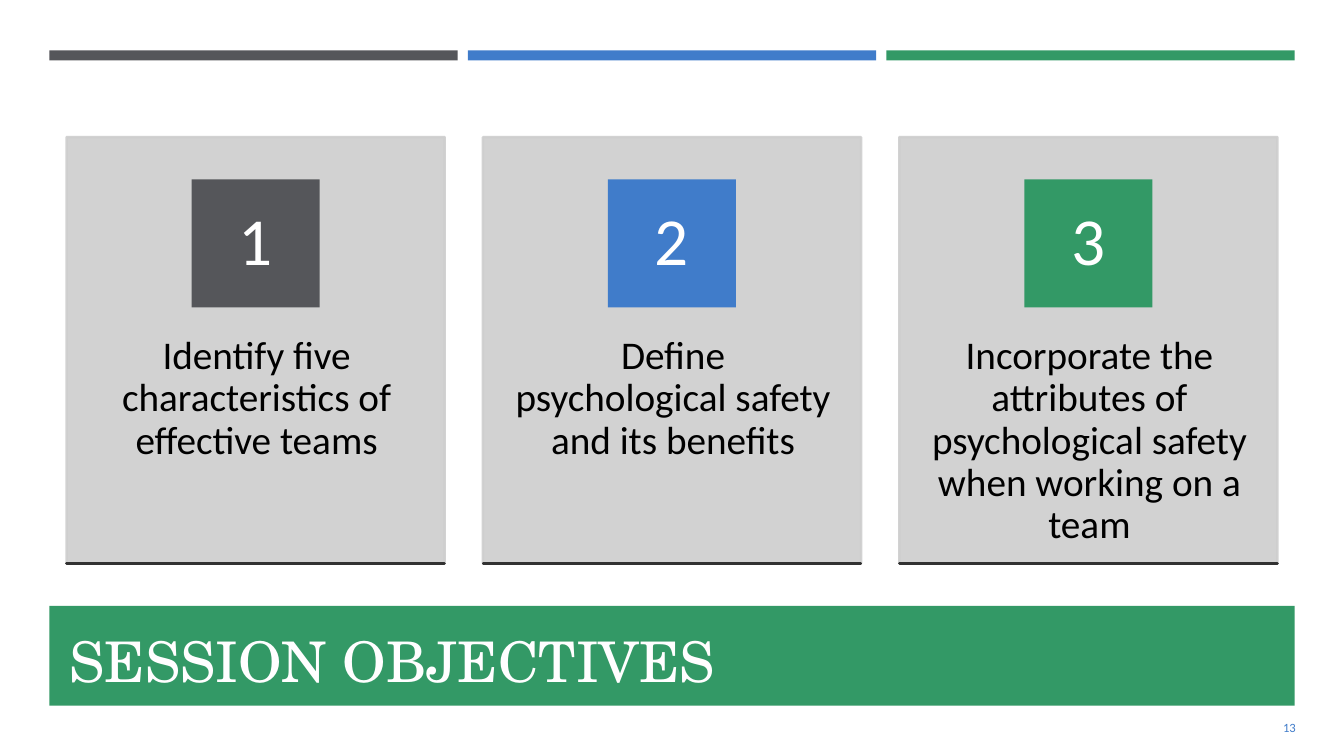
import pptx
import pptx.dml.color
import pptx.enum.shapes
import pptx.enum.text
import pptx.oxml
import pptx.oxml.ns
import pptx.util
from dataclasses import dataclass

Inches = pptx.util.Inches
Align = pptx.enum.text.PP_ALIGN
Anchor = pptx.enum.text.MSO_ANCHOR


@dataclass(frozen=True)
class Theme:
    gray: str = "55565A"
    blue: str = "407CCA"
    green: str = "339966"
    card: str = "CECECE"
    rule: str = "323232"
    title_text: str = "FFFEFF"
    white: str = "FFFFFF"
    black: str = "000000"
    heading_font: str = "TeX Gyre Schola"
    body_font: str = "Calibri"
    title_size: int = 40
    number_size: int = 48
    body_size: int = 28
    footer_size: int = 9
    line_width: float = 1.75


theme = Theme()
deck = pptx.Presentation()
deck.slide_width, deck.slide_height = Inches(13.33), Inches(7.5)
page = deck.slides.add_slide(deck.slide_layouts[6])


def add_block(left, top, width, height, color, outlined=False, opacity=100):
    block = page.shapes.add_shape(
        pptx.enum.shapes.MSO_SHAPE.RECTANGLE,
        Inches(left), Inches(top), Inches(width), Inches(height))
    block.shadow.inherit = False
    fills = [block.fill]
    if outlined:
        block.line.width = pptx.util.Pt(theme.line_width)
        fills.append(block.line.fill)
    else:
        block.line.fill.background()
    for fill in fills:
        fill.solid()
        fill.fore_color.rgb = pptx.dml.color.RGBColor.from_string(color)
    if opacity < 100:
        for tint in block.element.spPr.iter(pptx.oxml.ns.qn("a:srgbClr")):
            tint.append(pptx.oxml.parse_xml(
                f'<a:alpha {pptx.oxml.ns.nsdecls("a")} val="{opacity * 1000}"/>'))
    return block


def write(box, text, size, color, font=theme.body_font, align=Align.CENTER,
          anchor=Anchor.MIDDLE, margins=(0.1, 0.05, 0.1, 0.05), spacing=None):
    frame = box.text_frame
    frame.word_wrap = True
    frame.vertical_anchor = anchor
    (frame.margin_left, frame.margin_top,
     frame.margin_right, frame.margin_bottom) = map(Inches, margins)
    para = frame.paragraphs[0]
    para.text = text
    para.alignment = align
    if spacing:
        para.line_spacing = spacing
    para.font.size = pptx.util.Pt(size)
    para.font.name = font
    para.font.color.rgb = pptx.dml.color.RGBColor.from_string(color)


# Top bars
accents = [theme.gray, theme.blue, theme.green]
for index, accent in enumerate(accents):
    add_block(0.49 + 4.15 * index, 0.5, 4.05, 0.1, accent)

# Title band
add_block(0.49, 6.01, 12.35, 0.99, theme.green)
title = page.shapes.add_textbox(Inches(0.59), Inches(6.11), Inches(12.06), Inches(0.87))
write(title, "SESSION OBJECTIVES", theme.title_size, theme.title_text,
      theme.heading_font, Align.LEFT)

# Slide number
number = page.shapes.add_textbox(Inches(11.8), Inches(7.02), Inches(1.15), Inches(0.4))
write(number, "13", theme.footer_size, theme.blue, align=Align.RIGHT)

# Objective cards
objectives = [
    "Identify five characteristics of effective teams",
    "Define psychological safety and its benefits",
    "Incorporate the attributes of psychological safety when working on a team",
]
card_width, card_top, card_height, badge_size = 3.75, 1.36, 4.23, 1.27
for index, (objective, accent) in enumerate(zip(objectives, accents)):
    left = 0.66 + 4.13 * index
    add_block(left, card_top, card_width, card_height, theme.card, True, 90)
    caption = page.shapes.add_textbox(
        Inches(left), Inches(2.97), Inches(card_width), Inches(2.54))
    write(caption, objective, theme.body_size, theme.black, anchor=Anchor.TOP,
          margins=(0.31, 0.36, 0.29, 0.36), spacing=0.9)
    badge = add_block(left + (card_width - badge_size) / 2, 1.78,
                      badge_size, badge_size, accent)
    write(badge, str(index + 1), theme.number_size, theme.white,
          margins=(0.1, 0.01, 0.1, 0.01), spacing=0.9)
    add_block(left, card_top + card_height, card_width, 0, theme.rule, True)

deck.save("out.pptx")
